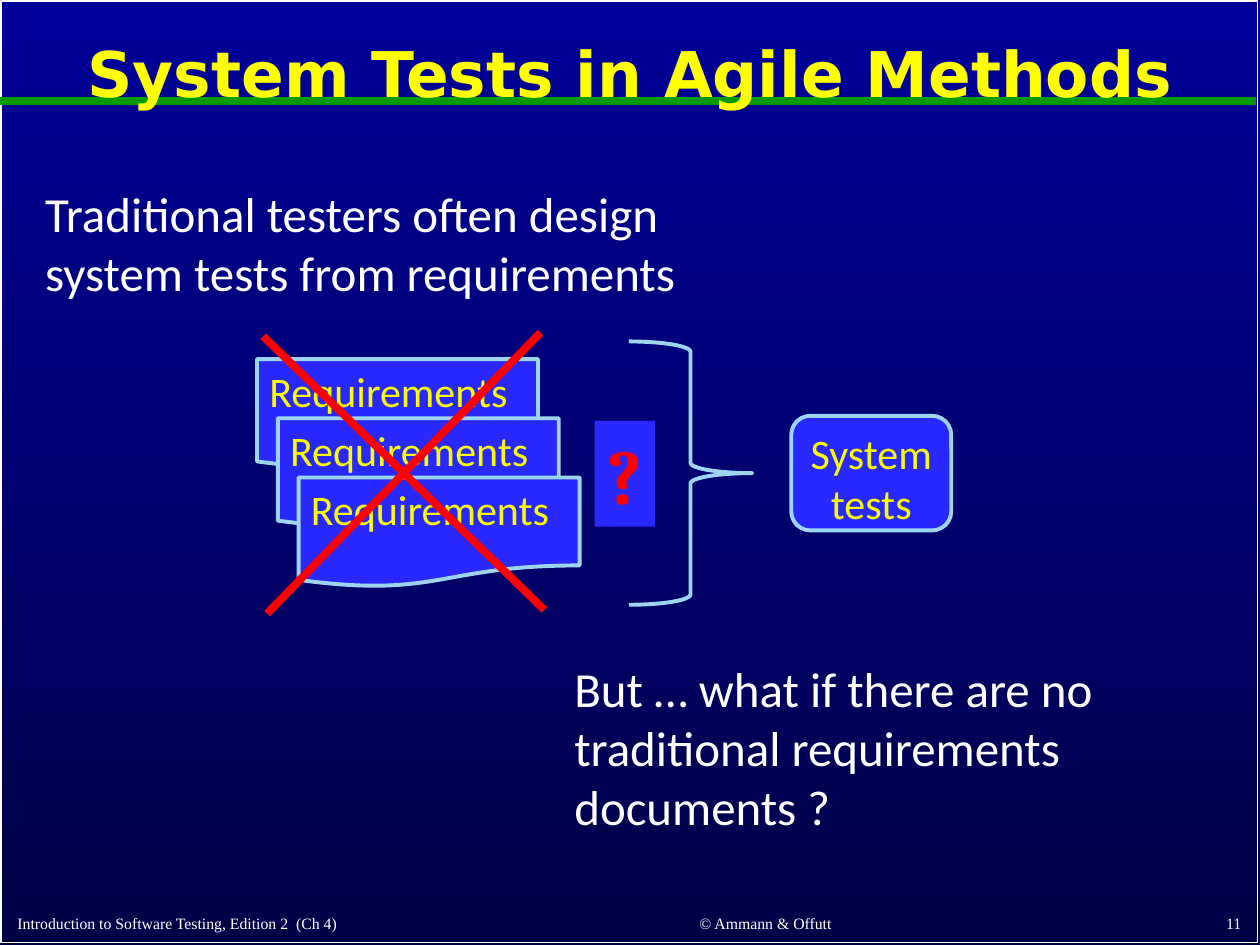
from lxml import etree
from pptx import Presentation
from pptx.dml.color import RGBColor
from pptx.enum import shapes, text
from pptx.oxml import ns
from pptx.util import Inches, Pt

TOP_BLUE = RGBColor(0x00, 0x00, 0x99)
BOTTOM_BLUE = RGBColor(0x00, 0x00, 0x47)
BOX_BLUE = RGBColor(0x29, 0x29, 0xFF)
PALE_BLUE = RGBColor(0x9D, 0xD5, 0xF1)
GREEN = RGBColor(0x00, 0x99, 0x00)
RED = RGBColor(0xFF, 0x00, 0x00)
WHITE = RGBColor(0xFF, 0xFF, 0xFF)
TITLE_YELLOW = RGBColor(0xFF, 0xFF, 0x00)
LABEL_YELLOW = RGBColor(0xFA, 0xFD, 0x00)

KIND = shapes.MSO_SHAPE
ALIGN = text.PP_ALIGN
ANCHOR = text.MSO_ANCHOR


def paint_background(page):
    fill = page.background.fill
    fill.gradient()
    fill.gradient_angle = 270
    for stop, color in zip(fill.gradient_stops, (TOP_BLUE, BOTTOM_BLUE)):
        stop.color.rgb = color


def write(shape, words, size, font, color, align=ALIGN.LEFT,
          anchor=ANCHOR.TOP, bold=False, wrap=True):
    frame = shape.text_frame
    frame.text = words
    frame.word_wrap = wrap
    frame.vertical_anchor = anchor
    para = frame.paragraphs[0]
    para.alignment = align
    span = para.runs[0].font
    span.size, span.name, span.bold = Pt(size), font, bold
    span.color.rgb = color
    return para


def add_text(page, at, *args, **options):
    box = page.shapes.add_textbox(*map(Inches, at))
    return write(box, *args, **options)


def add_shape(parent, kind, at, fill=None, line=None, width=2.25):
    shape = parent.shapes.add_shape(kind, *map(Inches, at))
    shape.shadow.inherit = False
    if fill is None:
        shape.fill.background()
    else:
        shape.fill.solid()
        shape.fill.fore_color.rgb = fill
    if line is None:
        shape.line.fill.background()
    else:
        shape.line.color.rgb = line
        shape.line.width = Pt(width)
    return shape


def add_line(page, start, end, color):
    line = page.shapes.add_connector(
        shapes.MSO_CONNECTOR.STRAIGHT, *map(Inches, start + end))
    line.line.color.rgb = color
    line.line.width = Pt(4.5)
    etree.SubElement(line._element.spPr, ns.qn("a:effectLst"))


def add_frame_and_title(page):
    add_shape(page, KIND.RECTANGLE, (0.01, 0.01, 9.97, 7.47), line=WHITE, width=1)
    add_line(page, (0, 0.8), (9.97, 0.8), GREEN)
    title = add_text(page, (0.05, 0.11, 9.9, 1), "System Tests in Agile Methods",
                     36, "DejaVu Sans", TITLE_YELLOW, ALIGN.CENTER,
                     ANCHOR.MIDDLE, bold=True)
    title.line_spacing = 0.9


def add_footer(page):
    for left, width, words, align in (
        (0.04, 4.2, "Introduction to Software Testing, Edition 2  (Ch 4)", ALIGN.LEFT),
        (4.49, 3.17, "© Ammann & Offutt", ALIGN.CENTER),
        (7.87, 2.08, "11", ALIGN.RIGHT),
    ):
        add_text(page, (left, 7.17, width, 0.28), words, 9, "Times New Roman",
                 WHITE, align, ANCHOR.BOTTOM)


def add_requirements_stack(page):
    stack = page.shapes.add_group_shape()
    for step in range(3):
        at = (2.04 + 0.165 * step, 2.85 + 0.47 * step, 2.23, 0.87)
        document = add_shape(stack, KIND.FLOWCHART_DOCUMENT, at, BOX_BLUE, PALE_BLUE)
        write(document, "Requirements", 24, "Calibri", LABEL_YELLOW)


def main():
    deck = Presentation()
    deck.slide_width, deck.slide_height = Inches(10), Inches(7.5)
    page = deck.slides.add_slide(deck.slide_layouts[6])
    paint_background(page)
    add_frame_and_title(page)
    add_footer(page)

    add_text(page, (0.26, 1.41, 5.32, 1.04),
             "Traditional testers often design system tests from requirements",
             28, "Calibri", WHITE)
    add_shape(page, KIND.RIGHT_BRACE, (4.99, 2.71, 0.98, 2.09), line=PALE_BLUE)
    tests = add_shape(page, KIND.ROUNDED_RECTANGLE, (6.28, 3.3, 1.27, 0.91),
                      BOX_BLUE, PALE_BLUE)
    write(tests, "System tests", 24, "Calibri", LABEL_YELLOW, ALIGN.CENTER)
    add_text(page, (4.46, 5.18, 4.75, 1.51),
             "But … what if there are no traditional requirements documents ?",
             28, "Calibri", WHITE)

    add_requirements_stack(page)
    add_line(page, (2.09, 2.67), (4.32, 4.84), RED)
    add_line(page, (4.29, 2.64), (2.12, 4.87), RED)
    question = add_shape(page, KIND.RECTANGLE, (4.72, 3.34, 0.48, 0.84), BOX_BLUE)
    write(question, "?", 44, "Cambria", RED, bold=True, wrap=False)

    deck.save("out.pptx")


if __name__ == "__main__":
    main()
